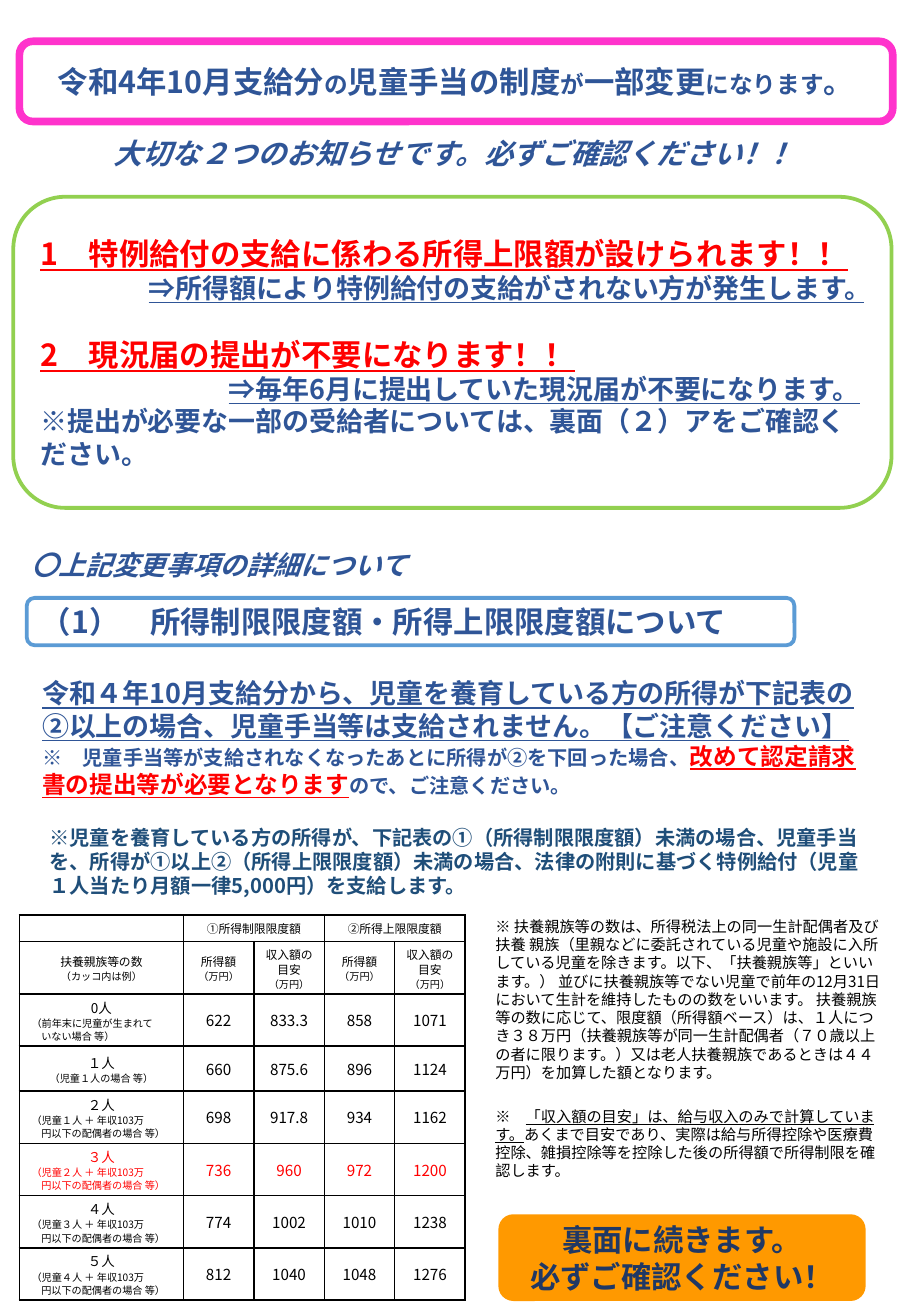
from lxml import etree
from pptx import Presentation
from pptx import util as u
from pptx.dml.color import RGBColor
from pptx.enum import shapes, text
from pptx.oxml.ns import qn

FONT = "Noto Sans CJK JP"
BLUE, RED, BLACK = "2F5597", "FF0000", "000000"
CENTER = text.PP_ALIGN.CENTER
TOP, MIDDLE = text.MSO_ANCHOR.TOP, text.MSO_ANCHOR.MIDDLE


def rgb(value):
    return RGBColor.from_string(value)


def para(p, runs, size, color=BLUE, line=None, bold=True, italic=False,
         under=False, align=None, left=0, before=0):
    p.alignment = align
    p.line_spacing = line or u.Pt(size * 1.2)
    p.space_before = u.Pt(before)
    pPr = p._p.get_or_add_pPr()
    if left:
        pPr.set("marL", str(u.Inches(left)))
    f = p.font
    f.size, f.bold, f.italic, f.underline = u.Pt(size), bold, italic, under
    f.color.rgb = rgb(color)
    f.name = FONT
    etree.SubElement(pPr.find(qn("a:defRPr")), qn("a:ea"), typeface=FONT)
    for run in runs:
        r = p.add_run()
        r.text = run[0]
        for key, value in (run[1] if len(run) > 1 else {}).items():
            if key == "size":
                r.font.size = u.Pt(value)
            elif key == "color":
                r.font.color.rgb = rgb(value)
            else:
                r.font.underline = value


prs = Presentation()
prs.slide_width, prs.slide_height = u.Inches(7.5), u.Inches(10.83)
s = prs.slides.add_slide(prs.slide_layouts[6])

small = {"size": 14}
frames = [
    ((4.11, 10, 3.01, 0.7), "FF9900", "FF9900", 1, None, [
        dict(runs=[("裏面に続きます。",)], size=18, color="203864", align=CENTER),
        dict(runs=[("必ずご確認ください！",)], size=18, color="203864", align=CENTER)]),
    ((0.22, 4.92, 6.32, 0.39), None, "5B9BD5", 2.25, None, [
        dict(runs=[("（1）　所得制限限度額・所得上限限度額について",)], size=18)]),
    ((0.22, 5.42, 7.02, 1.3), None, None, 0, 0.075, [
        dict(runs=[("令和４年10月支給分から、児童を養育している方の所得が下記表の②以上の場合、"
                    "児童手当等は支給されません。【ご注意ください】",)], size=16, under=True),
        dict(runs=[("※　児童手当等が支給されなくなったあとに所得が②を下回った場合、",),
                   ("改めて認定請求書の提出等が必要となります",
                    {"size": 14, "color": RED, "underline": True}),
                   ("ので、ご注意ください。",)], size=12, line=u.Pt(16.8))]),
    ((0.16, 0.34, 7.19, 0.66), None, "FF33CC", 4.5, None, [
        dict(runs=[("令和4年10月支給分",), ("の", small), ("児童手当の制度",), ("が", small),
                   ("一部変更",), ("になります", small), ("。",)], size=18, align=CENTER)]),
    ((0.11, 1.62, 7.23, 2.56), None, "92D050", 2.25, None, [
        dict(runs=[("1　特例給付の支給に係わる所得上限額が設けられます！！",)],
             size=18, color=RED, under=True),
        dict(runs=[("⇒所得額により特例給付の支給がされない方が発生します。",)],
             size=16, under=True, left=0.89),
        dict(runs=[("2　現況届の提出が不要になります！！",)],
             size=18, color=RED, under=True, before=19.2),
        dict(runs=[("⇒毎年6月に提出していた現況届が不要になります。",)],
             size=16, under=True, left=1.55),
        dict(runs=[("※提出が必要な一部の受給者については、裏面（２）アをご確認ください。",)], size=16)]),
]
notes = [
    ((0.84, 1.12, 6.44, 0.47), dict(
        runs=[("大切な２つのお知らせです。必ずご確認ください！！",)], size=17, line=0.8, italic=True)),
    ((0.16, 4.52, 3.81, 0.34), dict(
        runs=[("〇上記変更事項の詳細について",)], size=16, line=0.8, italic=True)),
    ((0.31, 6.74, 6.97, 0.71), dict(
        runs=[("※児童を養育している方の所得が、下記表の①（所得制限限度額）未満の場合、児童手当を、"
               "所得が①以上②（所得上限限度額）未満の場合、法律の附則に基づく特例給付"
               "（児童１人当たり月額一律5,000円）を支給します。",)], size=12, color="1F4E79")),
    ((3.98, 7.5, 3.37, 1.62), dict(
        runs=[("※ 扶養親族等の数は、所得税法上の同一生計配偶者及び扶養 親族（里親などに委託されている"
               "児童や施設に入所している児童を除きます。以下、「扶養親族等」といいます。） "
               "並びに扶養親族等でない児童で前年の12月31日において生計を維持したものの数をいいます。 "
               "扶養親族等の数に応じて、限度額（所得額ベース）は、１人につき３８万円"
               "（扶養親族等が同一生計配偶者（７０歳以上の者に限ります。）又は老人扶養親族であるときは"
               "４４万円）を加算した額となります。",)], size=9, color=BLACK, bold=False)),
    ((3.98, 9.06, 3.34, 0.71), dict(
        runs=[("※　",), ("「収入額の目安」は、給与収入のみで計算しています。", {"underline": True}),
              ("あくまで目安であり、実際は給与所得控除や医療費控除、雑損控除等を控除した後の"
               "所得額で所得制限を確認します。",)], size=9, color=BLACK, bold=False)),
]

for box, fill, line, width, adj, paras in frames:
    sp = s.shapes.add_shape(shapes.MSO_SHAPE.ROUNDED_RECTANGLE, *map(u.Inches, box))
    sp.shadow.inherit = False
    if adj:
        sp.adjustments[0] = adj
    if fill:
        sp.fill.solid()
        sp.fill.fore_color.rgb = rgb(fill)
    else:
        sp.fill.background()
    if line:
        sp.line.color.rgb = rgb(line)
        sp.line.width = u.Pt(width)
    else:
        sp.line.fill.background()
    tf = sp.text_frame
    tf.word_wrap = True
    tf.vertical_anchor = MIDDLE
    for i, item in enumerate(paras):
        p = tf.add_paragraph() if i else tf.paragraphs[0]
        para(p, **{"align": text.PP_ALIGN.LEFT, **item})

for box, item in notes:
    tf = s.shapes.add_textbox(*map(u.Inches, box)).text_frame
    tf.word_wrap = True
    tf.vertical_anchor = TOP
    para(tf.paragraphs[0], **item)

income = [("所得額", 7), ("（万円）", 6)]
revenue = [("収入額の目安", 7), ("（万円）", 6)]
rows = [
    [[], [("①所得制限限度額", 7)], [], [("②所得上限限度額", 7)], []],
    [[("扶養親族等の数", 7), ("（カッコ内は例）", 6)], income, revenue, income, revenue],
]
families = [
    ("0人", ["（前年末に児童が生まれて", "いない場合 等）"], "622 833.3 858 1071"),
    ("１人", ["（児童１人の場合 等）"], "660 875.6 896 1124"),
    ("２人", ["（児童１人 ＋ 年収103万", "円以下の配偶者の場合 等）"], "698 917.8 934 1162"),
    ("３人", ["（児童２人 ＋ 年収103万", "円以下の配偶者の場合 等）"], "736 960 972 1200"),
    ("４人", ["（児童３人 ＋ 年収103万", "円以下の配偶者の場合 等）"], "774 1002 1010 1238"),
    ("５人", ["（児童４人 ＋ 年収103万", "円以下の配偶者の場合 等）"], "812 1040 1048 1276"),
]
for count, example, limits in families:
    rows.append([[(count, 8)] + [(t, 6) for t in example]]
                + [[(value, 9)] for value in limits.split()])

table = s.shapes.add_table(8, 5, *map(u.Inches, (0.16, 7.53, 3.67, 3.17))).table
table.first_row = table.horz_banding = False
for col, width in zip(table.columns, [1.35] + [0.58] * 4):
    col.width = u.Inches(width)
for row, height in zip(table.rows, [0.22, 0.43, 0.43, 0.37] + [0.43] * 4):
    row.height = u.Inches(height)
for c in (1, 3):
    table.cell(0, c).merge(table.cell(0, c + 1))

for r, row in enumerate(rows):
    for c, lines in enumerate(row):
        cell = table.cell(r, c)
        cell.vertical_anchor = MIDDLE
        cell.margin_left = cell.margin_right = u.Inches(0.05 if c else 0.1)
        cell.margin_top, cell.margin_bottom = u.Inches(0.04), u.Inches(0.02)
        cell.fill.background()
        tcPr = cell._tc.get_or_add_tcPr()
        for i, side in enumerate(("lnL", "lnR", "lnT", "lnB")):
            ln = etree.Element(qn("a:" + side), w=str(u.Pt(1)))
            etree.SubElement(etree.SubElement(ln, qn("a:solidFill")), qn("a:srgbClr"), val=BLACK)
            tcPr.insert(i, ln)
        tf = cell.text_frame
        if not lines:
            etree.SubElement(tf.paragraphs[0]._p, qn("a:endParaRPr"), sz="700")
        for i, (words, size) in enumerate(lines):
            p = tf.add_paragraph() if i else tf.paragraphs[0]
            example = len(lines) == 3 and i > 0
            para(p, [(words,)], size, RED if r == 5 else BLACK, u.Pt(size * 1.3), bold=False,
                 align=text.PP_ALIGN.LEFT if example else CENTER,
                 left=0.08 if example and i == 2 else 0)

prs.save("out.pptx")
